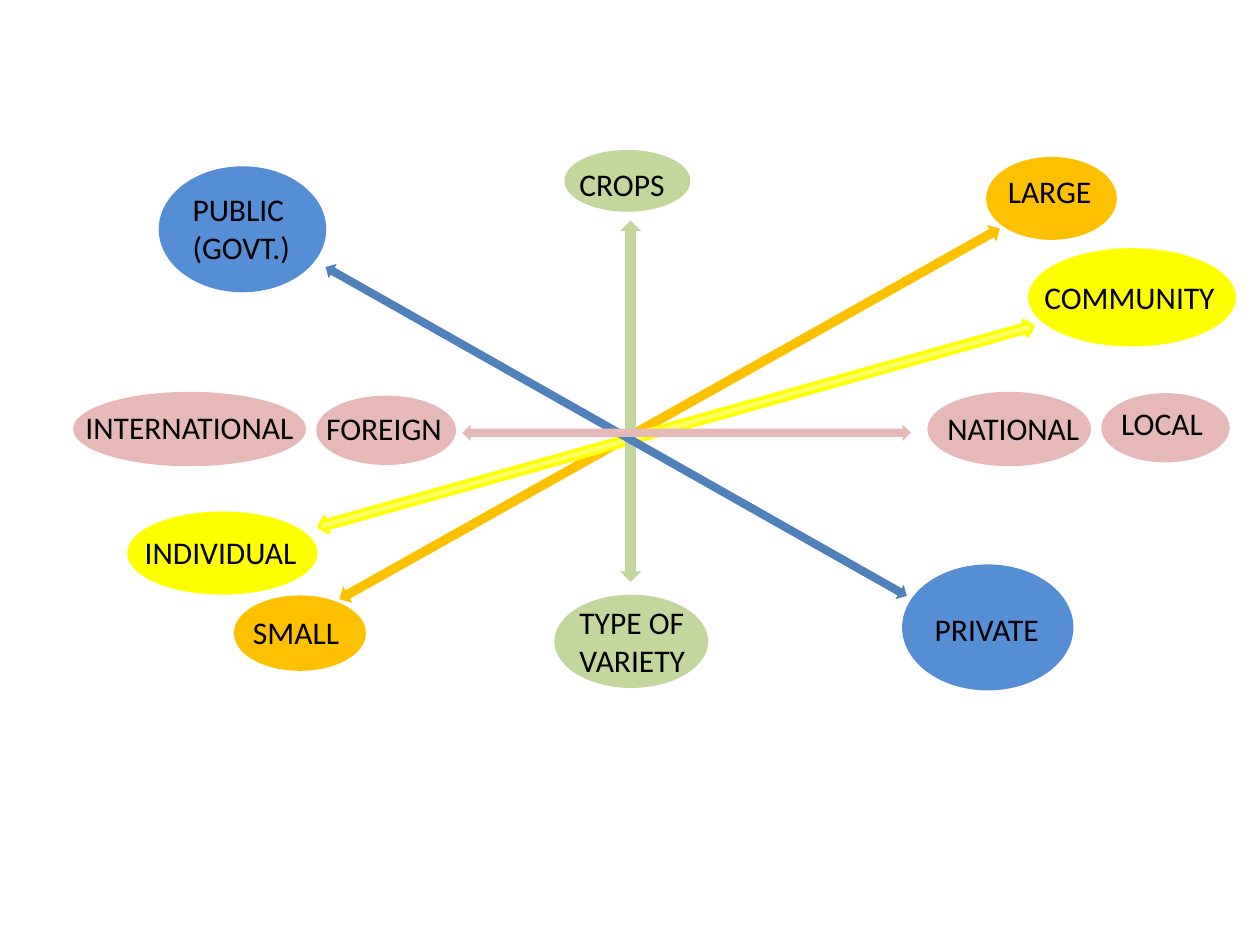
from pptx import Presentation
from pptx import util as u
from pptx.dml.color import RGBColor
from pptx.enum import shapes, text

PX = 9144  # 100 px to the inch
BLUE, PINK, GREEN = "558ED5", "E6B9B8", "C3D69B"
YELLOW, ORANGE, BLACK = "FFFF00", "FFC000", "000000"
KIND = shapes.MSO_SHAPE

# fill, outline, ellipse (left, top, width, height), label box, paragraphs
FACTORS = [
    (YELLOW, None, (816, 197, 165, 78), (819, 216, 165, 40), ["COMMUNITY"]),
    (YELLOW, None, (101, 406, 151, 66), (105, 418, 142, 40), ["INDIVIDUAL"]),
    (BLUE, None, (126, 132, 133, 100), (143, 146, 126, 71), ["PUBLIC", "(GOVT.)"]),
    (BLUE, None, (716, 448, 136, 100), (732, 479, 109, 40), ["PRIVATE"]),
    (PINK, None, (58, 311, 185, 59), (58, 319, 185, 40), ["INTERNATIONAL"]),
    (PINK, None, (251, 314, 111, 55), (249, 320, 171, 40), ["FOREIGN"]),
    (PINK, None, (874, 312, 102, 55), (880, 316, 112, 40), ["LOCAL"]),
    (PINK, None, (736, 311, 130, 59), (742, 320, 166, 40), ["NATIONAL"]),
    (ORANGE, ORANGE, (784, 126, 101, 63), (790, 132, 101, 40), ["LARGE"]),
    (ORANGE, ORANGE, (187, 474, 102, 57), (191, 482, 94, 40), ["SMALL"]),
    (GREEN, None, (440, 472, 122, 74), (450, 474, 112, 73), ["TYPE OF VARIETY"]),
    (GREEN, None, (448, 119, 100, 49), (450, 126, 91, 40), ["CROPS"]),
]

# preset, fill, outline, unrotated frame, rotation in degrees
AXES = [
    (KIND.LEFT_RIGHT_ARROW, ORANGE, None, (231, 321, 601, 15), 330.7),
    (KIND.LEFT_RIGHT_ARROW, "FFFF66", YELLOW, (242, 332, 589, 13), 344.3),
    (KIND.UP_DOWN_ARROW, GREEN, None, (492, 175, 17, 287), 0),
    (KIND.LEFT_RIGHT_ARROW, "4F81BD", None, (224, 336, 530, 13), 29.5),
    (KIND.LEFT_RIGHT_ARROW, PINK, None, (367, 337, 356, 13), 0),
]


def color(value):
    return RGBColor.from_string(value)


class Page:
    font = "Calibri"
    size = u.Pt(18)
    outline_width = u.Pt(2)

    def __init__(self, deck):
        self.shapes = deck.slides.add_slide(deck.slide_layouts[6]).shapes

    def shape(self, kind, fill, outline, frame, rotation=0):
        shape = self.shapes.add_shape(kind, *(n * PX for n in frame))
        shape.shadow.inherit = False
        shape.rotation = rotation
        shape.fill.solid()
        shape.fill.fore_color.rgb = color(fill)
        if outline:
            shape.line.color.rgb = color(outline)
            shape.line.width = self.outline_width
        else:
            shape.line.fill.background()

    def label(self, frame, lines):
        box = self.shapes.add_textbox(*(n * PX for n in frame))
        frame = box.text_frame
        frame.word_wrap = True
        frame.auto_size = text.MSO_AUTO_SIZE.SHAPE_TO_FIT_TEXT
        for index, line in enumerate(lines):
            para = frame.add_paragraph() if index else frame.paragraphs[0]
            span = para.add_run()
            span.text = line
            span.font.name = self.font
            span.font.size = self.size
            span.font.color.rgb = color(BLACK)


def main():
    deck = Presentation()
    deck.slide_width, deck.slide_height = 1000 * PX, 750 * PX
    page = Page(deck)
    for fill, outline, ellipse, label, lines in FACTORS:
        page.shape(KIND.OVAL, fill, outline, ellipse)
        page.label(label, lines)
    for axis in AXES:
        page.shape(*axis)
    deck.save("out.pptx")


if __name__ == "__main__":
    main()
